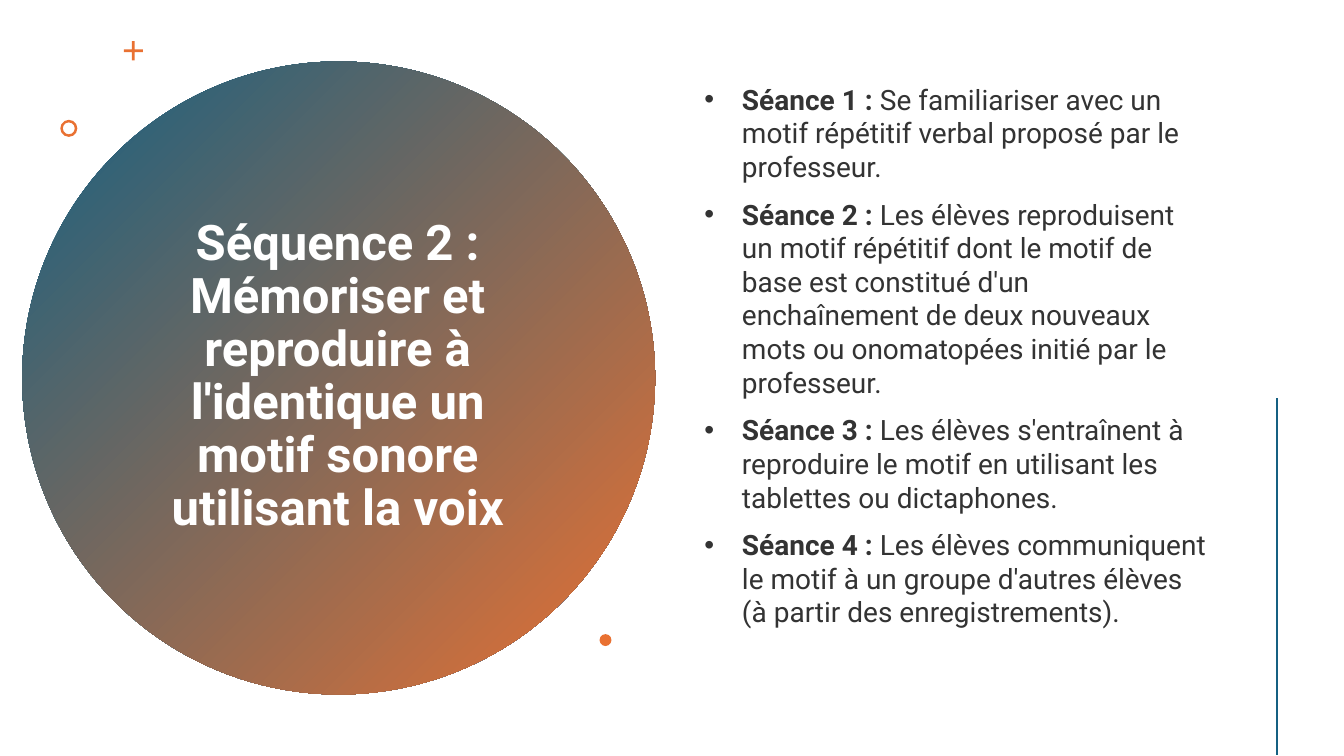
from lxml import etree
from pptx import Presentation
from pptx import util as u
from pptx.dml.color import RGBColor
from pptx.enum import shapes, text
from pptx.oxml.ns import qn

# Content
TITLE = "Séquence 2 : Mémoriser et reproduire à l'identique un motif sonore utilisant la voix"
STEPS = [
    "Se familiariser avec un motif répétitif verbal proposé par le professeur.",
    "Les élèves reproduisent un motif répétitif dont le motif de base est constitué d'un "
    "enchaînement de deux nouveaux mots ou onomatopées initié par le professeur.",
    "Les élèves s'entraînent à reproduire le motif en utilisant les tablettes ou dictaphones.",
    "Les élèves communiquent le motif à un groupe d'autres élèves (à partir des enregistrements).",
]
HEX = {"blue": "156082", "orange": "E97132", "white": "FFFFFF", "ink": "333333"}
FONT = "Roboto"
KIND = shapes.MSO_SHAPE

# Accents: kind, left, top, size in cm, adjustment
MARKS = [
    (KIND.CROSS, 3.12, 1.04, 0.48, 0.43),
    (KIND.DONUT, 1.52, 3.02, 0.43, 0.15),
    (KIND.OVAL, 15.11, 15.98, 0.3, None),
]


def tint(name):
    return RGBColor.from_string(HEX[name])


def add_mark(slide, kind, left, top, size, adj=None):
    mark = slide.shapes.add_shape(kind, u.Cm(left), u.Cm(top), u.Cm(size), u.Cm(size))
    mark.shadow.inherit = False
    mark.line.fill.background()
    mark.fill.solid()
    mark.fill.fore_color.rgb = tint("orange")
    if adj is not None:
        mark.adjustments[0] = adj
    return mark


def add_box(slide, *place):
    frame = slide.shapes.add_textbox(*map(u.Cm, place)).text_frame
    frame.word_wrap = True
    frame.vertical_anchor = text.MSO_ANCHOR.MIDDLE
    return frame


def add_run(para, words, size, color, bold=False):
    run = para.add_run()
    run.text = words
    run.font.name = FONT
    run.font.size = u.Pt(size)
    run.font.bold = bold
    run.font.color.rgb = tint(color)


def add_dot(para, indent):
    props = para._p.get_or_add_pPr()
    props.set("marL", str(u.Cm(indent)))
    props.set("indent", str(-u.Cm(indent)))
    etree.SubElement(props, qn("a:buFont")).set("typeface", "Arial")
    etree.SubElement(props, qn("a:buChar")).set("char", "•")


def main():
    deck = Presentation()
    deck.slide_width, deck.slide_height = u.Cm(33.87), u.Cm(19.05)
    slide = deck.slides.add_slide(deck.slide_layouts[6])

    # Large gradient disc
    disc = add_mark(slide, KIND.OVAL, 0.56, 1.55, 15.95)
    disc.fill.gradient()
    disc.fill.gradient_angle = 315
    for stop, name, pos in zip(disc.fill.gradient_stops, ("blue", "orange"), (0, 1)):
        stop.color.rgb = tint(name)
        stop.position = pos

    # Title
    head = add_box(slide, 3.45, 3.58, 10.13, 11.86).paragraphs[0]
    head.alignment = text.PP_ALIGN.CENTER
    head.line_spacing = 0.9
    add_run(head, TITLE, 35, "white", True)

    # Small accents
    for mark in MARKS:
        add_mark(slide, *mark)

    # Session list
    body = add_box(slide, 17.5, 1.45, 13.26, 15.01)
    for num, step in enumerate(STEPS, 1):
        para = body.paragraphs[0] if num == 1 else body.add_paragraph()
        para.space_before = u.Pt(10)
        add_dot(para, 0.95)
        add_run(para, f"Séance {num} :", 20, "ink", True)
        add_run(para, f" {step}", 20, "ink")

    # Vertical rule
    rule = slide.shapes.add_connector(
        shapes.MSO_CONNECTOR.STRAIGHT, u.Cm(32.18), u.Cm(10.03), u.Cm(32.18), u.Cm(19.03))
    rule.line.color.rgb = tint("blue")
    rule.line.width = u.Pt(2)
    etree.SubElement(rule._element.spPr, qn("a:effectLst"))

    deck.save("out.pptx")


if __name__ == "__main__":
    main()
